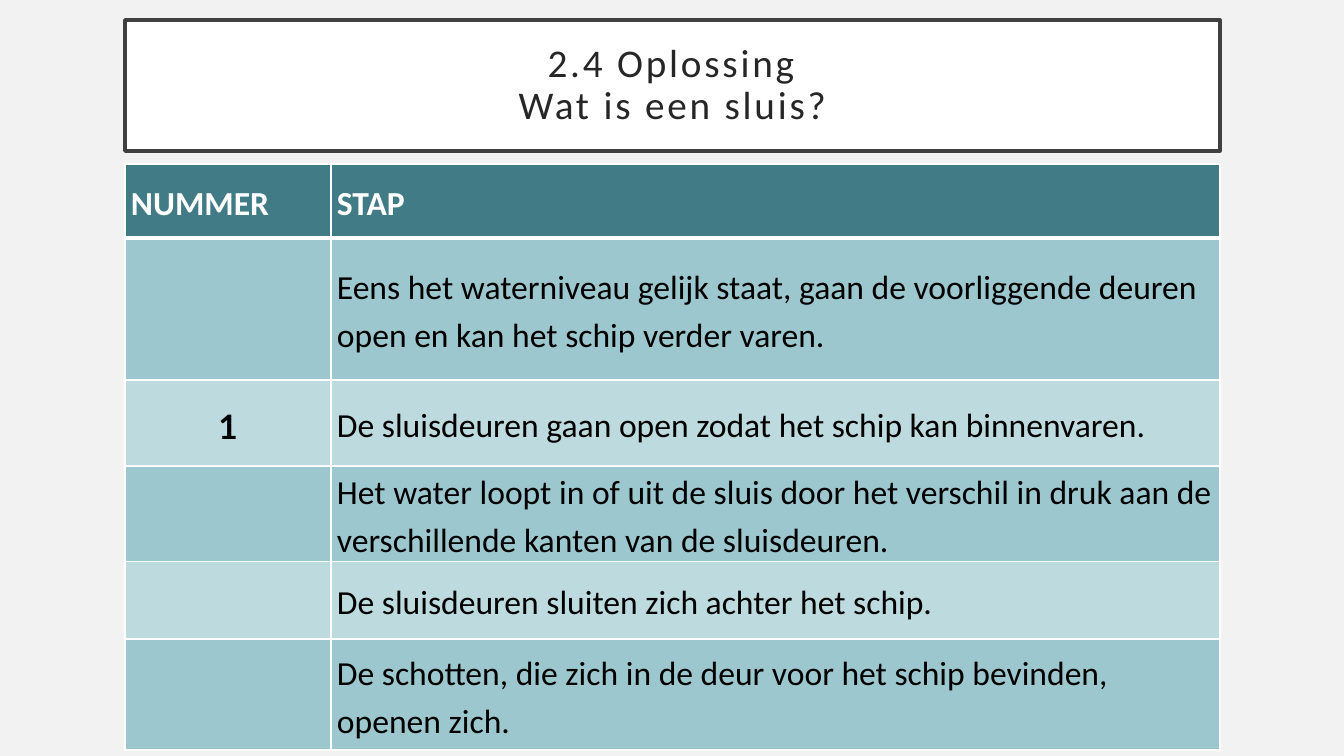
from dataclasses import dataclass

from lxml import etree
from pptx import Presentation
from pptx.dml.color import RGBColor
from pptx.enum.shapes import MSO_SHAPE
from pptx.enum.text import MSO_ANCHOR, PP_ALIGN
from pptx.oxml.ns import qn
from pptx.util import Emu, Pt

RECTANGLE = MSO_SHAPE.RECTANGLE
MIDDLE = MSO_ANCHOR.MIDDLE
LEFT, CENTER = PP_ALIGN.LEFT, PP_ALIGN.CENTER
EMU_PER_PX = 914400 / 100.8


@dataclass(frozen=True)
class Theme:
    background: str = "F2F2F2"
    white: str = "FFFFFF"
    frame: str = "404040"
    title_ink: str = "262626"
    ink: str = "000000"
    header: str = "417B85"
    bands: tuple = ("9CC7CE", "BDDADF")
    font: str = "Calibri"
    number_font: str = "Lato"
    title_size: int = 28
    body_size: int = 24


def px(length):
    return Emu(round(length * EMU_PER_PX))


def rgb(code):
    return RGBColor.from_string(code)


def apply(target, values):
    for name, value in values.items():
        setattr(target, name, value)


class SlideBuilder:
    def __init__(self, deck, theme):
        self.theme = theme
        self.page = deck.slides.add_slide(deck.slide_layouts[6])
        self.paint(self.page.background.fill, theme.background)

    def paint(self, fill, color):
        fill.solid()
        fill.fore_color.rgb = rgb(color)

    def fill_text(self, frame, lines, size, color, font, para_format, bold=False, tracking=0):
        para = frame.paragraphs[0]
        apply(para, para_format)
        for index, line in enumerate(lines):
            if index:
                para.add_line_break()
            span = para.add_run()
            span.text = line
            apply(span.font, {"name": font, "size": Pt(size), "bold": bold})
            span.font.color.rgb = rgb(color)
            if tracking:
                span.font._element.set("spc", str(tracking * 100))

    def title(self, lines, left, top, width, height):
        theme = self.theme
        box = self.page.shapes.add_shape(RECTANGLE, px(left), px(top), px(width), px(height))
        box.shadow.inherit = False
        self.paint(box.fill, theme.white)
        self.paint(box.line.fill, theme.frame)
        box.line.width = Pt(2.5)
        sides = ("left", "top", "right", "bottom")
        apply(box.text_frame, {"word_wrap": True, "vertical_anchor": MIDDLE,
                               **{f"margin_{side}": px(20) for side in sides}})
        self.fill_text(box.text_frame, lines, theme.title_size, theme.title_ink, theme.font,
                       {"alignment": CENTER, "line_spacing": 0.9}, tracking=2)

    def borders(self, cell, top, bottom):
        properties = cell._tc.get_or_add_tcPr()
        weights = {"lnL": 1, "lnR": 1, "lnT": top, "lnB": bottom}
        for index, (side, weight) in enumerate(weights.items()):
            line = etree.Element(qn(f"a:{side}"), w=str(Pt(weight)))
            fill = etree.SubElement(line, qn("a:solidFill"))
            etree.SubElement(fill, qn("a:srgbClr"), val=self.theme.white)
            properties.insert(index, line)

    def cell(self, cell, text, row, column):
        theme = self.theme
        is_header = row == 0
        is_number = column == 0 and not is_header
        self.paint(cell.fill, theme.header if is_header else theme.bands[(row - 1) % 2])
        self.borders(cell, 3 if row == 1 else 1, 3 if is_header else 1)
        if not text:
            return
        apply(cell, {"vertical_anchor": MIDDLE, "margin_left": px(6), "margin_right": px(6),
                     "margin_top": 0, "margin_bottom": 0})
        self.fill_text(cell.text_frame, [text], theme.body_size,
                       theme.white if is_header else theme.ink,
                       theme.number_font if is_number else theme.font,
                       {"alignment": CENTER if is_number else LEFT,
                        "line_spacing": 1.16, "space_after": Pt(8)},
                       bold=is_header or is_number)

    def table(self, rows, left, top, widths, heights):
        table = self.page.shapes.add_table(
            len(rows), len(widths), px(left), px(top), px(sum(widths)), px(sum(heights))).table
        for column, width in zip(table.columns, widths):
            column.width = px(width)
        for row, height in zip(table.rows, heights):
            row.height = px(height)
        for row, texts in enumerate(rows):
            for column, text in enumerate(texts):
                self.cell(table.cell(row, column), text, row, column)


STEPS = [
    ("NUMMER", "STAP"),
    ("", "Eens het waterniveau gelijk staat, gaan de voorliggende deuren open en kan het schip verder varen."),
    ("1", "De sluisdeuren gaan open zodat het schip kan binnenvaren."),
    ("", "Het water loopt in of uit de sluis door het verschil in druk aan de verschillende kanten van de sluisdeuren."),
    ("", "De sluisdeuren sluiten zich achter het schip."),
    ("", "De schotten, die zich in de deur voor het schip bevinden, openen zich."),
]


def main():
    deck = Presentation()
    apply(deck, {"slide_width": px(1344), "slide_height": px(756)})
    builder = SlideBuilder(deck, Theme())

    # Framed title
    builder.title(["2.4 Oplossing", "Wat is een sluis?"], 125, 20, 1095, 131)

    # Steps to be numbered
    builder.table(STEPS, 125, 164, [206, 889], [74, 142, 86, 93, 78, 111])

    deck.save("out.pptx")


if __name__ == "__main__":
    main()
